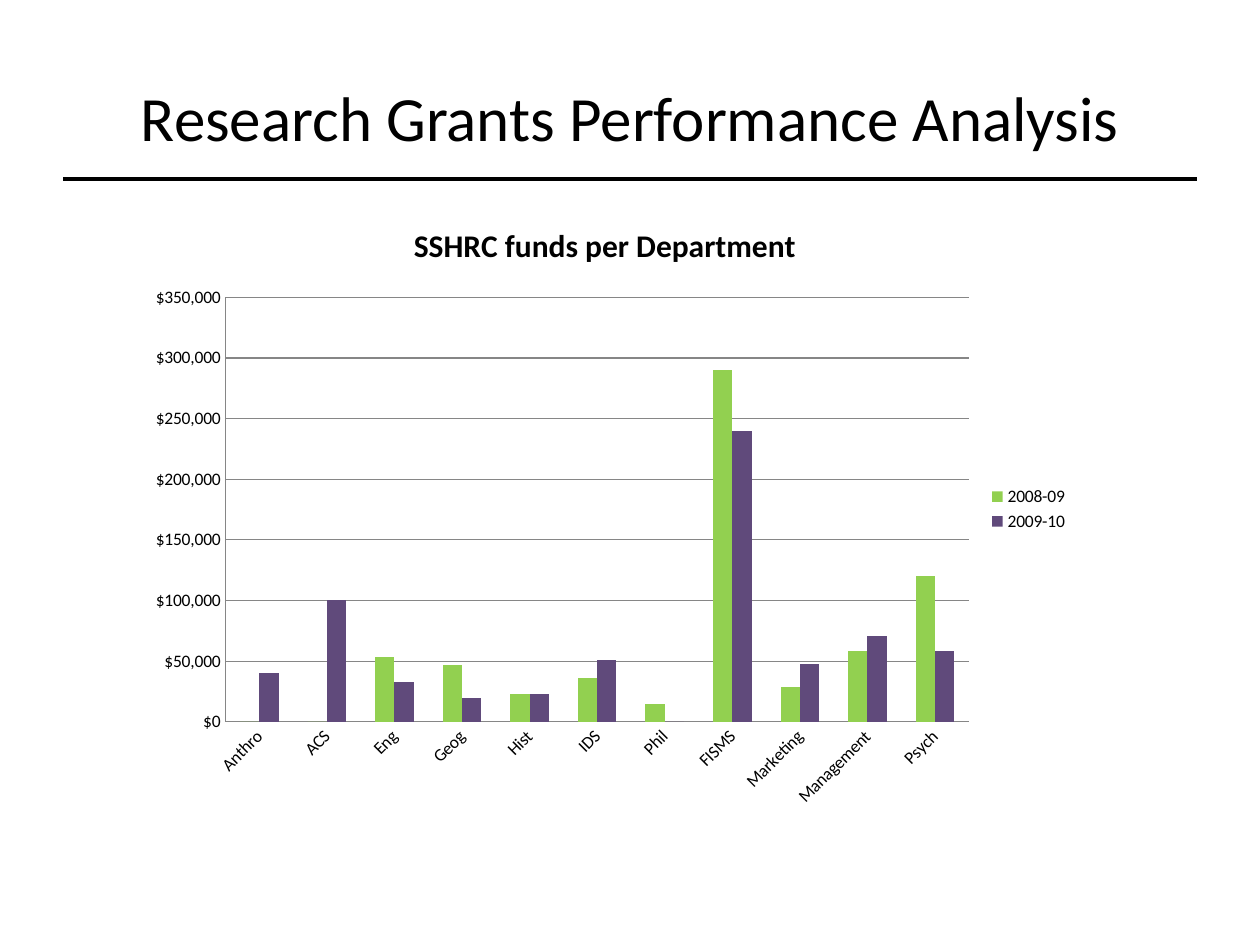
from dataclasses import dataclass

import lxml.etree
import pptx
import pptx.chart.chart
import pptx.chart.data
import pptx.dml.color
import pptx.enum.chart
import pptx.enum.shapes
import pptx.enum.text
import pptx.oxml.ns
import pptx.slide
import pptx.util

Inches = pptx.util.Inches
Pt = pptx.util.Pt
RGBColor = pptx.dml.color.RGBColor
qn = pptx.oxml.ns.qn

BLACK = RGBColor(0x00, 0x00, 0x00)
GREY = RGBColor(0x86, 0x86, 0x86)
GREEN = RGBColor(0x92, 0xD0, 0x50)
PURPLE = RGBColor(0x60, 0x4A, 0x7B)
FONT = "Calibri"
CHART_WIDTH = Inches(7.5)
CHART_HEIGHT = Inches(4.92)


@dataclass
class Year:
    name: str
    color: RGBColor
    funds: list[int]


DEPARTMENTS = ["Anthro", "ACS", "Eng", "Geog", "Hist", "IDS", "Phil", "FISMS",
               "Marketing", "Management", "Psych"]
YEARS = [
    Year("2008-09", GREEN, [0, 0, 53000, 47000, 23000, 36000, 15000, 290000,
                            29000, 58000, 120000]),
    Year("2009-10", PURPLE, [40000, 100000, 33000, 20000, 23000, 51000, 0, 240000,
                             48000, 71000, 58000]),
]


def add_title(s: pptx.slide.Slide, text: str) -> None:
    sp = s.shapes.add_textbox(Inches(0.5), Inches(0.3), Inches(9), Inches(1.25))
    tf = sp.text_frame
    tf.word_wrap = True
    tf.vertical_anchor = pptx.enum.text.MSO_ANCHOR.MIDDLE
    p = tf.paragraphs[0]
    p.text = text
    p.alignment = pptx.enum.text.PP_ALIGN.CENTER
    p.font.name = FONT
    p.font.size = Pt(36)
    p.font.color.rgb = BLACK


def add_rule(s: pptx.slide.Slide) -> None:
    sp = s.shapes.add_connector(pptx.enum.shapes.MSO_CONNECTOR.STRAIGHT,
                                Inches(0.5), Inches(1.42), Inches(9.5), Inches(1.42))
    sp.line.color.rgb = BLACK
    sp.line.width = Pt(2)
    lxml.etree.SubElement(sp._element.spPr, qn("a:effectLst"))


def place_plot(chart: pptx.chart.chart.Chart, left: int, top: int,
               width: int, height: int) -> None:
    area = chart._chartSpace.chart.plotArea
    for old in area.findall(qn("c:layout")):
        area.remove(old)
    layout = lxml.etree.Element(qn("c:layout"))
    manual = lxml.etree.SubElement(layout, qn("c:manualLayout"))
    settings = {"layoutTarget": "inner", "xMode": "edge", "yMode": "edge",
                "x": left / CHART_WIDTH, "y": top / CHART_HEIGHT,
                "w": width / CHART_WIDTH, "h": height / CHART_HEIGHT}
    for tag, value in settings.items():
        lxml.etree.SubElement(manual, qn(f"c:{tag}")).set("val", str(value))
    area.insert(0, layout)


def add_funds_chart(s: pptx.slide.Slide) -> None:
    data = pptx.chart.data.CategoryChartData(number_format='"$"#,##0')
    data.categories = DEPARTMENTS
    for year in YEARS:
        data.add_series(year.name, year.funds)
    chart = s.shapes.add_chart(pptx.enum.chart.XL_CHART_TYPE.COLUMN_CLUSTERED,
                               Inches(1.08), Inches(1.58), CHART_WIDTH, CHART_HEIGHT,
                               data).chart
    chart.font.name = FONT
    chart.font.size = Pt(10)
    chart.font.color.rgb = BLACK

    chart.has_title = True
    p = chart.chart_title.text_frame.paragraphs[0]
    p.text = "SSHRC funds per Department "
    p.font.name = FONT
    p.font.size = Pt(18)
    p.font.bold = True
    p.font.color.rgb = BLACK
    chart.chart_title.include_in_layout = False

    chart.has_legend = True
    chart.legend.position = pptx.enum.chart.XL_LEGEND_POSITION.RIGHT
    chart.legend.include_in_layout = False

    plot = chart.plots[0]
    plot.gap_width = 150
    plot.overlap = 0
    plot.vary_by_categories = False
    for series, year in zip(plot.series, YEARS):
        series.format.fill.solid()
        series.format.fill.fore_color.rgb = year.color

    for axis in (chart.category_axis, chart.value_axis):
        axis.major_tick_mark = pptx.enum.chart.XL_TICK_MARK.NONE
        axis.minor_tick_mark = pptx.enum.chart.XL_TICK_MARK.NONE
        axis.format.line.color.rgb = GREY
        axis.tick_labels.font.size = Pt(10)
    chart.category_axis._element.find(qn("c:txPr")).find(qn("a:bodyPr")).set("rot", "-2700000")

    values = chart.value_axis
    values.minimum_scale = 0
    values.maximum_scale = 350000
    values.major_unit = 50000
    values.has_major_gridlines = True
    values.major_gridlines.format.line.color.rgb = GREY
    values.tick_labels.number_format = '"$"#,##0'
    values.tick_labels.number_format_is_linked = False
    place_plot(chart, Inches(0.71), Inches(0.78), Inches(5.9), Inches(3.37))


def main() -> None:
    prs = pptx.Presentation()
    prs.slide_width = Inches(10)
    prs.slide_height = Inches(7.5)
    s = prs.slides.add_slide(prs.slide_layouts[6])
    add_title(s, "Research Grants Performance Analysis")
    add_rule(s)
    add_funds_chart(s)
    prs.save("out.pptx")


if __name__ == "__main__":
    main()
